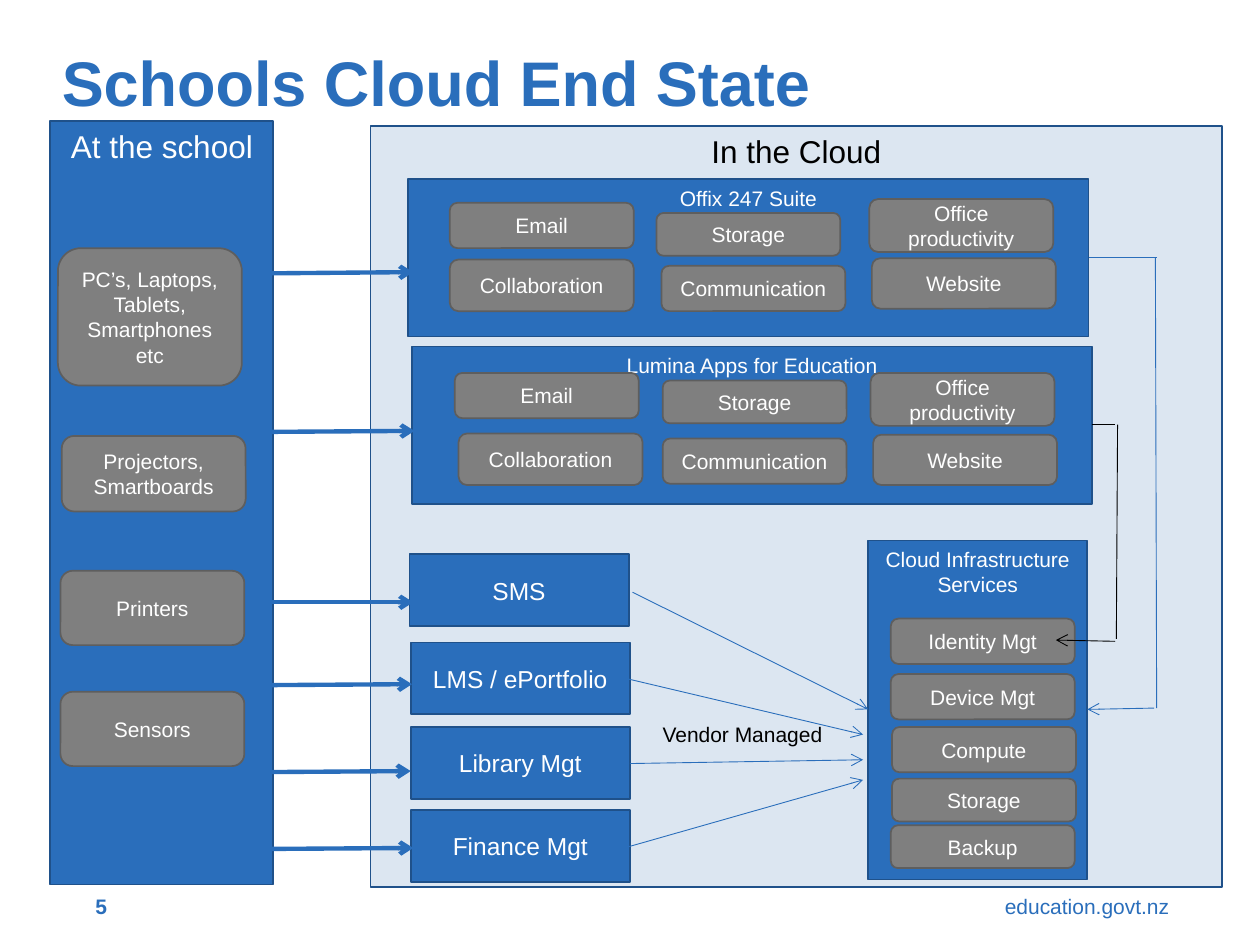
from lxml.etree import SubElement
from pptx import Presentation
from pptx.dml.color import RGBColor
from pptx.enum.shapes import MSO_CONNECTOR, MSO_SHAPE
from pptx.enum.text import MSO_ANCHOR, MSO_AUTO_SIZE, PP_ALIGN
from pptx.oxml.ns import qn
from pptx.util import Inches, Pt

BLUE = RGBColor(0x2A, 0x6E, 0xBB)
NAVY = RGBColor(0x1F, 0x51, 0x8A)
PALE = RGBColor(0xDC, 0xE6, 0xF1)
GREY = RGBColor(0x7F, 0x7F, 0x7F)
DARK = RGBColor(0x5E, 0x5E, 0x5E)
WHITE = RGBColor(0xFF, 0xFF, 0xFF)
BLACK = RGBColor(0, 0, 0)

PILL_W = 1.46
SUITE_AREA = (5.4, 1.25)
VENDOR_AREA = (1.74, 0.57)

# Label and height of each app in a suite, column by column
APPS = [("Email", 0.36), ("Collaboration", 0.41), ("Storage", 0.34),
        ("Communication", 0.36), ("Office productivity", 0.42), ("Website", 0.4)]

# Suite name, corner, and corner of each app
SUITES = [
    ("Offix 247 Suite", (3.24, 1.42),
     [(3.57, 1.61), (3.57, 2.06), (5.21, 1.69), (5.25, 2.11), (6.9, 1.58), (6.92, 2.05)]),
    ("Lumina Apps for Education", (3.27, 2.75),
     [(3.61, 2.96), (3.64, 3.44), (5.26, 3.02), (5.26, 3.48), (6.91, 2.96), (6.93, 3.45)]),
]

# Label, left, top, height
DEVICES = [("PC’s, Laptops, Tablets, Smartphones etc", 0.46, 1.97, 1.09),
           ("Projectors,\nSmartboards", 0.49, 3.46, 0.6),
           ("Printers", 0.48, 4.53, 0.59),
           ("Sensors", 0.48, 5.49, 0.59)]
SERVICES = [("Identity Mgt", 7.07, 4.91, 0.36),
            ("Device Mgt", 7.07, 5.35, 0.36),
            ("Compute", 7.08, 5.77, 0.36),
            ("Storage", 7.08, 6.18, 0.34),
            ("Backup", 7.07, 6.55, 0.34)]

# Label, corner, and the ends of the arrow to the infrastructure
VENDORS = [("SMS", (3.25, 4.4), (5.02, 4.7), (6.89, 5.63)),
           ("LMS / ePortfolio", (3.26, 5.1), (4.99, 5.39), (6.85, 5.83)),
           ("Library Mgt", (3.26, 5.77), (5, 6.06), (6.85, 6.03)),
           ("Finance Mgt", (3.26, 6.43), (4.99, 6.72), (6.85, 6.19))]

# Ends of the arrows from the school to the cloud
FEEDS = [((2.09, 2.17), (3.28, 2.16)), ((1.8, 3.43), (3.29, 3.42)),
         ((2.03, 4.78), (3.28, 4.78)), ((1.79, 5.44), (3.27, 5.43)),
         ((1.78, 6.13), (3.26, 6.12)), ((1.8, 6.74), (3.28, 6.73))]


def write(frame, text, size=12, color=WHITE, bold=False,
          align=PP_ALIGN.CENTER, anchor=MSO_ANCHOR.MIDDLE, wrap=True, spacing=None):
    """Fill a text frame, one paragraph a line."""
    frame.word_wrap = wrap
    frame.auto_size = MSO_AUTO_SIZE.NONE
    frame.vertical_anchor = anchor
    for i, line in enumerate(text.split("\n")):
        para = frame.add_paragraph() if i else frame.paragraphs[0]
        para.text = line
        para.alignment = align
        if spacing:
            para.line_spacing = spacing
        font = para.font
        font.name, font.size, font.bold = "Arial", Pt(size), bold
        font.color.rgb = color


def add_box(slide, kind, text, spot, area, fill, edge, **style):
    box = slide.shapes.add_shape(kind, *map(Inches, spot + area))
    box.shadow.inherit = False
    box.fill.solid()
    box.fill.fore_color.rgb = fill
    box.line.color.rgb = edge
    box.line.width = Pt(1)
    write(box.text_frame, text, **style)


def add_panel(slide, text, spot, area, fill=BLUE, **style):
    add_box(slide, MSO_SHAPE.RECTANGLE, text, spot, area, fill, NAVY, **style)


def add_pill(slide, text, left, top, height):
    add_box(slide, MSO_SHAPE.ROUNDED_RECTANGLE, text, (left, top),
            (PILL_W, height), GREY, DARK)


def add_label(slide, text, spot, area, **style):
    box = slide.shapes.add_textbox(*map(Inches, spot + area))
    write(box.text_frame, text, **style)


def add_line(slide, start, end, color=BLUE, width=0.5, arrow=True):
    line = slide.shapes.add_connector(MSO_CONNECTOR.STRAIGHT, *map(Inches, start + end))
    line.line.color.rgb = color
    line.line.width = Pt(width)
    props = line._element.spPr
    if arrow:
        SubElement(props.find(qn("a:ln")), qn("a:tailEnd"), type="arrow")
    SubElement(props, qn("a:effectLst"))


def add_title(slide, text):
    title = slide.shapes.title
    title.left, title.top = Inches(0.39), Inches(0.12)
    title.width, title.height = Inches(7.4), Inches(1.13)
    write(title.text_frame, text, size=36, color=BLUE, bold=True,
          align=PP_ALIGN.LEFT, spacing=0.9)


def add_suite(slide, name, spot, spots):
    add_panel(slide, name, spot, SUITE_AREA, anchor=MSO_ANCHOR.TOP)
    for (app, height), (left, top) in zip(APPS, spots):
        add_pill(slide, app, left, top, height)


def main():
    deck = Presentation()
    deck.slide_width, deck.slide_height = Inches(10), Inches(7.5)
    slide = deck.slides.add_slide(deck.slide_layouts[5])

    # Title and footer
    add_title(slide, "Schools Cloud End State")
    add_label(slide, "education.govt.nz", (7.11, 7.04), (2.27, 0.3), color=BLUE,
              align=PP_ALIGN.RIGHT, anchor=MSO_ANCHOR.TOP)
    add_label(slide, "5", (0.66, 7.09), (0.87, 0.2), color=BLUE, bold=True,
              align=PP_ALIGN.LEFT)

    # Main panels
    top = MSO_ANCHOR.TOP
    add_panel(slide, "At the school", (0.4, 0.96), (1.77, 6.06), size=18, anchor=top)
    add_panel(slide, "In the Cloud", (2.94, 1), (6.76, 6.04), fill=PALE,
              size=18, color=BLACK, anchor=top)
    add_panel(slide, "Cloud Infrastructure Services", (6.89, 4.29), (1.74, 2.69),
              anchor=top)

    # Suites, services and devices
    for suite in SUITES:
        add_suite(slide, *suite)
    for pill in SERVICES + DEVICES:
        add_pill(slide, *pill)

    # Vendor systems
    for name, spot, start, end in VENDORS:
        add_panel(slide, name, spot, VENDOR_AREA, size=14)
        add_line(slide, start, end)
    add_label(slide, "Vendor Managed", (5.16, 5.68), (1.48, 0.3), color=BLACK,
              align=PP_ALIGN.LEFT, anchor=top, wrap=False)

    # Routes from the suites to the infrastructure
    add_line(slide, (8.64, 2.04), (9.18, 2.04), arrow=False)
    add_line(slide, (9.18, 5.62), (9.17, 2.04), arrow=False)
    add_line(slide, (9.16, 5.62), (8.63, 5.63))
    add_line(slide, (8.85, 3.37), (8.67, 3.37), color=BLACK, arrow=False)
    add_line(slide, (8.86, 5.07), (8.87, 3.37), color=BLACK, arrow=False)
    add_line(slide, (8.85, 5.09), (8.38, 5.08), color=BLACK)

    # Arrows from the school to the cloud
    for start, end in FEEDS:
        add_line(slide, start, end, width=2.5)

    deck.save("out.pptx")


if __name__ == "__main__":
    main()
